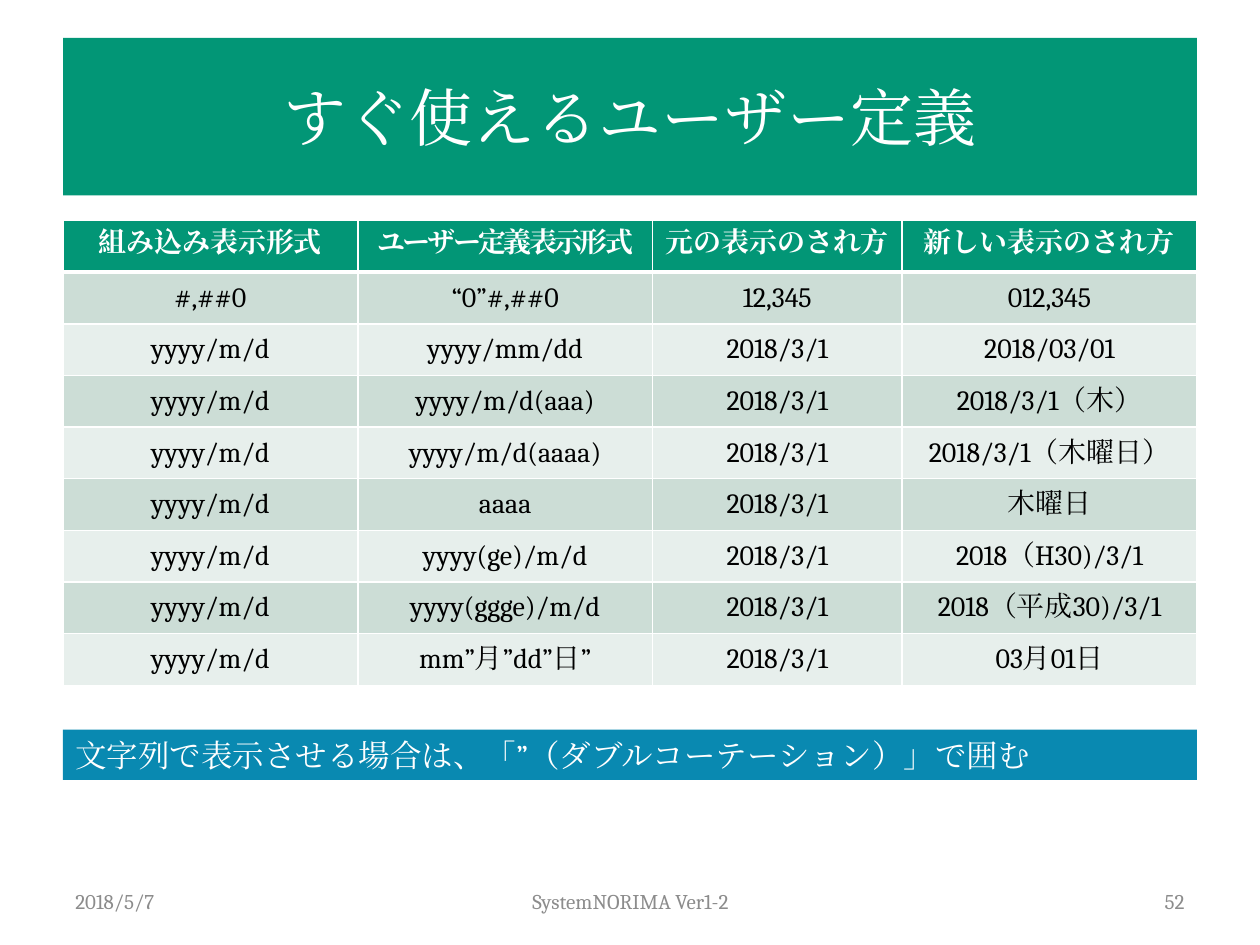
"""Build the slide on ready-to-use custom number formats."""
from lxml.etree import SubElement
from pptx import Presentation
from pptx.dml.color import RGBColor
from pptx.enum.shapes import MSO_SHAPE
from pptx.enum.text import MSO_ANCHOR, PP_ALIGN
from pptx.oxml.ns import qn
from pptx.util import Inches, Pt

GREEN = RGBColor(0x02, 0x96, 0x76)
BLUE = RGBColor(0x09, 0x89, 0xB1)
BAND_DARK = RGBColor(0xCC, 0xDD, 0xD6)
BAND_LIGHT = RGBColor(0xE7, 0xEF, 0xEC)
GRAY = RGBColor(0x8C, 0x8C, 0x8C)
WHITE = RGBColor(0xFF, 0xFF, 0xFF)
BLACK = RGBColor(0, 0, 0)
FONT = "Cambria"


def set_text(tf, text, size, color, align, bold=False):
    tf.text = text
    p = tf.paragraphs[0]
    p.alignment = align
    r = p.runs[0]
    r.font.size = Pt(size)
    r.font.bold = bold
    r.font.name = FONT
    r.font.color.rgb = color
    SubElement(r._r.get_or_add_rPr(), qn("a:ea")).set("typeface", FONT)
    return r


def add_border(cell, side, width):
    ln = SubElement(cell._tc.get_or_add_tcPr(), qn(f"a:ln{side}"), w=str(Pt(width)))
    fill = SubElement(ln, qn("a:solidFill"))
    SubElement(fill, qn("a:srgbClr"), val=str(WHITE))


prs = Presentation()
prs.slide_width, prs.slide_height = Inches(10), Inches(7.5)
s = prs.slides.add_slide(prs.slide_layouts[5])

title = s.shapes.title
title.left, title.top = Inches(0.5), Inches(0.3)
title.width, title.height = Inches(9), Inches(1.25)
title.fill.solid()
title.fill.fore_color.rgb = GREEN
title.text_frame.vertical_anchor = MSO_ANCHOR.MIDDLE
set_text(title.text_frame, "すぐ使えるユーザー定義", 36, WHITE, PP_ALIGN.CENTER)

headers = ["組み込み表示形式", "ユーザー定義表示形式", "元の表示のされ方", "新しい表示のされ方"]
date_formats = [
    ("yyyy/mm/dd", "2018/03/01"),
    ("yyyy/m/d(aaa)", "2018/3/1（木）"),
    ("yyyy/m/d(aaaa)", "2018/3/1（木曜日）"),
    ("aaaa", "木曜日"),
    ("yyyy(ge)/m/d", "2018（H30)/3/1"),
    ("yyyy(ggge)/m/d", "2018（平成30)/3/1"),
    ("mm”月”dd”日”", "03月01日"),
]
rows = [headers, ["#,##0", "“0”#,##0", "12,345", "012,345"]]
rows += [["yyyy/m/d", custom, "2018/3/1", shown] for custom, shown in date_formats]

table = s.shapes.add_table(
    len(rows), len(headers), Inches(0.5), Inches(1.75), Inches(9), Inches(3.69)
).table
for column, width in zip(table.columns, (2.34, 2.34, 1.98, 2.34)):
    column.width = Inches(width)
for i, row in enumerate(rows):
    table.rows[i].height = Inches(0.41)
    is_header = i == 0
    fill = GREEN if is_header else (BAND_DARK if i % 2 else BAND_LIGHT)
    for j, text in enumerate(row):
        cell = table.cell(i, j)
        r = set_text(cell.text_frame, text, 16, WHITE if is_header else BLACK,
                     PP_ALIGN.CENTER, is_header)
        if text == "ユーザー定義表示形式":
            r._r.get_or_add_rPr().set("spc", "-150")
        cell.vertical_anchor = MSO_ANCHOR.TOP if is_header else MSO_ANCHOR.MIDDLE
        widths = {"L": 1, "R": 1, "T": 3 if i == 1 else 1, "B": 3 if is_header else 1}
        for side, width in widths.items():
            add_border(cell, side, width)
        cell.fill.solid()
        cell.fill.fore_color.rgb = fill

note = s.shapes.add_shape(MSO_SHAPE.RECTANGLE, Inches(0.5), Inches(5.79), Inches(9), Inches(0.4))
note.shadow.inherit = False
note.fill.solid()
note.fill.fore_color.rgb = BLUE
note.line.fill.background()
note.text_frame.word_wrap = True
note.text_frame.vertical_anchor = MSO_ANCHOR.TOP
set_text(note.text_frame, "文字列で表示させる場合は、「”（ダブルコーテーション）」で囲む",
         18, WHITE, PP_ALIGN.LEFT)

footers = [
    (0.5, 2.33, "2018/5/7", PP_ALIGN.LEFT),
    (3.42, 3.17, "SystemNORIMA Ver1-2", PP_ALIGN.CENTER),
    (7.17, 2.33, "52", PP_ALIGN.RIGHT),
]
for left, width, text, align in footers:
    box = s.shapes.add_textbox(Inches(left), Inches(6.95), Inches(width), Inches(0.4))
    box.text_frame.word_wrap = True
    box.text_frame.vertical_anchor = MSO_ANCHOR.MIDDLE
    set_text(box.text_frame, text, 12, GRAY, align)

prs.save("out.pptx")
